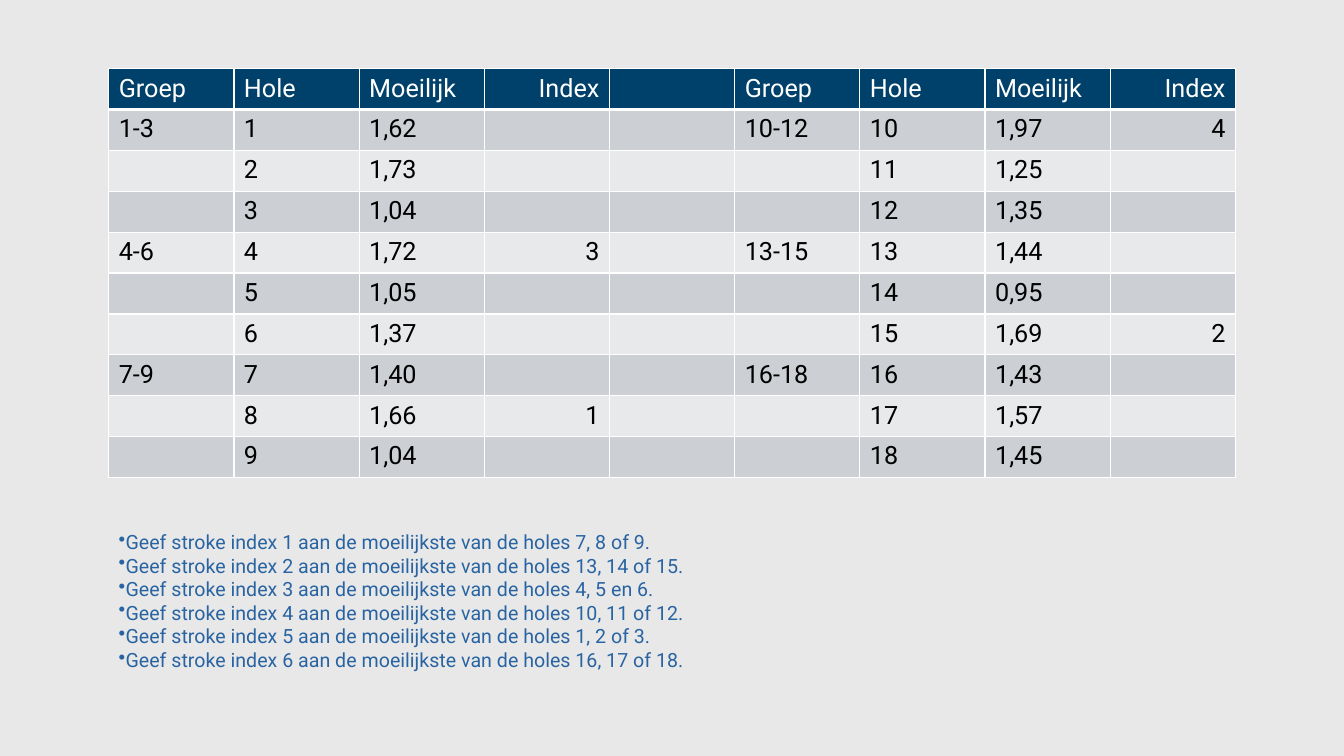
import pptx
import pptx.dml.color
import pptx.enum.text
import pptx.oxml
import pptx.oxml.ns
import pptx.util
from pptx.util import Cm

# Content
HEADINGS = ["Groep", "Hole", "Moeilijk", "Index"]
FRONT_NINE = [
    ("1-3", "1", "1,62", ""),
    ("", "2", "1,73", ""),
    ("", "3", "1,04", ""),
    ("4-6", "4", "1,72", "3"),
    ("", "5", "1,05", ""),
    ("", "6", "1,37", ""),
    ("7-9", "7", "1,40", ""),
    ("", "8", "1,66", "1"),
    ("", "9", "1,04", ""),
]
BACK_NINE = [
    ("10-12", "10", "1,97", "4"),
    ("", "11", "1,25", ""),
    ("", "12", "1,35", ""),
    ("13-15", "13", "1,44", ""),
    ("", "14", "0,95", ""),
    ("", "15", "1,69", "2"),
    ("16-18", "16", "1,43", ""),
    ("", "17", "1,57", ""),
    ("", "18", "1,45", ""),
]
RULES = [
    "Geef stroke index 1 aan de moeilijkste van de holes 7, 8 of 9.",
    "Geef stroke index 2 aan de moeilijkste van de holes 13, 14 of 15.",
    "Geef stroke index 3 aan de moeilijkste van de holes 4, 5 en 6.",
    "Geef stroke index 4 aan de moeilijkste van de holes 10, 11 of 12.",
    "Geef stroke index 5 aan de moeilijkste van de holes 1, 2 of 3.",
    "Geef stroke index 6 aan de moeilijkste van de holes 16, 17 of 18.",
]
COLOURS = {
    "background": "E8E8E8",
    "header": "00416B",
    "odd": "CCCFD4",
    "even": "E7E9EB",
    "border": "FFFFFF",
    "header_text": "FFFFFF",
    "score_text": "000000",
    "rule_text": "2964A2",
}
FONT = "Roboto"
LEFT, WIDTH = Cm(2.74), Cm(28.4)
SCORES_TOP, ROW_HEIGHT = Cm(1.73), Cm(1.03)
RULES_TOP, RULES_HEIGHT = Cm(13.23), Cm(3.84)


def colour(name):
    return pptx.dml.color.RGBColor.from_string(COLOURS[name])


def add_text(paragraph, text, size, colour_name):
    run = paragraph.add_run()
    run.text = text
    run.font.name = FONT
    run.font.size = pptx.util.Pt(size)
    run.font.bold = False
    run.font.color.rgb = colour(colour_name)


def add_border(cell, side, points):
    cell._tc.get_or_add_tcPr().append(pptx.oxml.parse_xml(
        f'<a:ln{side} {pptx.oxml.ns.nsdecls("a")} w="{pptx.util.Pt(points)}">'
        f'<a:solidFill><a:srgbClr val="{COLOURS["border"]}"/></a:solidFill>'
        f'</a:ln{side}>'))


def add_scores(slide):
    rows = [[*HEADINGS, "", *HEADINGS]]
    rows += [[*front, "", *back] for front, back in zip(FRONT_NINE, BACK_NINE)]
    columns = len(rows[0])
    scores = slide.shapes.add_table(len(rows), columns, LEFT, SCORES_TOP,
                                    WIDTH, ROW_HEIGHT * len(rows)).table
    scores.horz_banding = False
    for column in scores.columns:
        column.width = WIDTH // columns
    for r, row in enumerate(rows):
        scores.rows[r].height = ROW_HEIGHT
        band = "header" if r == 0 else "odd" if r % 2 else "even"
        for c, text in enumerate(row):
            cell = scores.cell(r, c)
            # The line under the header is thicker than the others
            for side, points in (("L", 1), ("R", 1), ("T", 3 if r == 1 else 1),
                                 ("B", 3 if r == 0 else 1)):
                add_border(cell, side, points)
            cell.fill.solid()
            cell.fill.fore_color.rgb = colour(band)
            if text:
                paragraph = cell.text_frame.paragraphs[0]
                if rows[0][c] == "Index":
                    paragraph.alignment = pptx.enum.text.PP_ALIGN.RIGHT
                add_text(paragraph, text, 18,
                         "header_text" if r == 0 else "score_text")


def add_rules(slide):
    frame = slide.shapes.add_textbox(LEFT, RULES_TOP, WIDTH, RULES_HEIGHT).text_frame
    frame.word_wrap = True
    frame.auto_size = pptx.enum.text.MSO_AUTO_SIZE.SHAPE_TO_FIT_TEXT
    for i, rule in enumerate(RULES):
        paragraph = frame.add_paragraph() if i else frame.paragraphs[0]
        paragraph._p.get_or_add_pPr().append(pptx.oxml.parse_xml(
            f'<a:buChar {pptx.oxml.ns.nsdecls("a")} char="•"/>'))
        add_text(paragraph, rule, 14, "rule_text")


def main():
    presentation = pptx.Presentation()
    presentation.slide_width, presentation.slide_height = Cm(33.87), Cm(19.05)
    slide = presentation.slides.add_slide(presentation.slide_layouts[6])
    slide.background.fill.solid()
    slide.background.fill.fore_color.rgb = colour("background")
    add_scores(slide)
    add_rules(slide)
    presentation.save("out.pptx")


if __name__ == "__main__":
    main()
